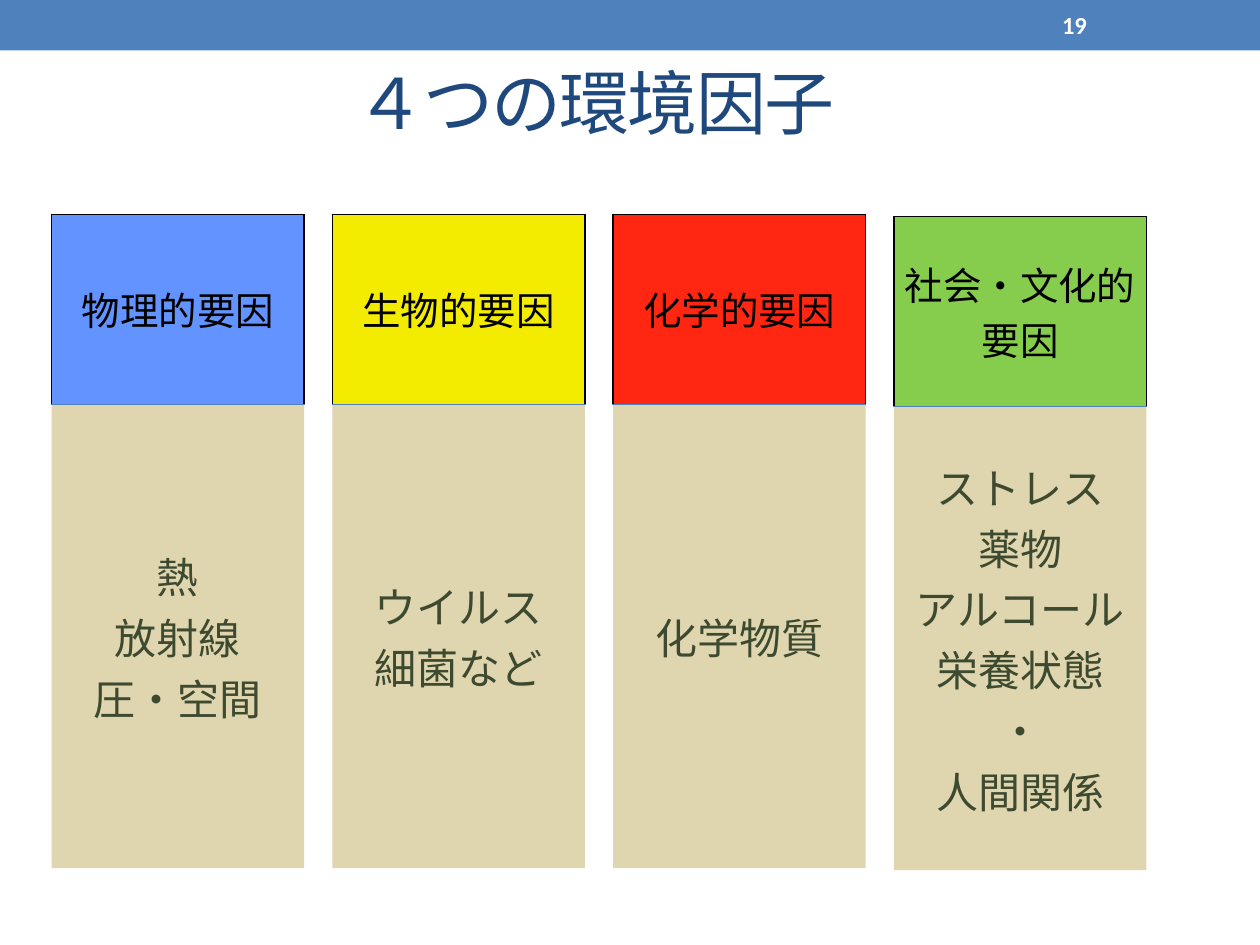
import pptx
import pptx.dml.color
import pptx.enum.shapes
import pptx.enum.text
import pptx.oxml
import pptx.oxml.ns
import pptx.util
from lxml import etree

Cm = pptx.util.Cm
Pt = pptx.util.Pt
RGBColor = pptx.dml.color.RGBColor
MIDDLE = pptx.enum.text.MSO_ANCHOR.MIDDLE
CENTER = pptx.enum.text.PP_ALIGN.CENTER
LEFT = pptx.enum.text.PP_ALIGN.LEFT

BLUE = RGBColor(0x4F, 0x81, 0xBD)
NAVY = RGBColor(0x1F, 0x49, 0x7D)
BLACK = RGBColor(0, 0, 0)
WHITE = RGBColor(0xFF, 0xFF, 0xFF)
SAND = RGBColor(0xD1, 0xC3, 0x8C)
OLIVE = RGBColor(0x3D, 0x4A, 0x30)

JAPANESE_FONT = "Noto Sans CJK JP"
TABLE_FONT = "TeX Gyre Schola"

# Content: heading, heading fill, examples
TITLE = "４つの環境因子"
PAGE_NUMBER = "19"
FACTORS = [
    ("物理的要因", RGBColor(0x62, 0x93, 0xFE), ["熱", "放射線", "圧・空間"]),
    ("生物的要因", RGBColor(0xF3, 0xEB, 0x00), ["ウイルス", "細菌など"]),
    ("化学的要因", RGBColor(0xFF, 0x27, 0x12), ["化学物質"]),
    ("社会・文化的要因", RGBColor(0x86, 0xCD, 0x4D),
     ["ストレス", "薬物", "アルコール", "栄養状態", "・", "人間関係"]),
]

# Layout in centimetres
TABLE_LEFT, TABLE_PITCH, TABLE_WIDTH = 1.04, 5.66, 5.09
TABLE_TOP, TABLE_BOTTOM_ROW = 4.32, 9.35
HEADING_HEIGHT = 3.83


def add_child(parent, tag, **attributes):
    child = etree.SubElement(parent, pptx.oxml.ns.qn(tag))
    for name, value in attributes.items():
        child.set(name, value)
    return child


def write_text(text_frame, lines, size, color, font, alignment, bold=False):
    text_frame.text = "\n".join(lines)
    for paragraph in text_frame.paragraphs:
        paragraph.alignment = alignment
        for run in paragraph.runs:
            run.font.size = Pt(size)
            run.font.color.rgb = color
            run.font.name = font
            run.font.bold = bold
            add_child(run.font._element, "a:ea", typeface=JAPANESE_FONT)


def add_text_box(slide, left, top, width, height, text, *style):
    box = slide.shapes.add_textbox(Cm(left), Cm(top), Cm(width), Cm(height))
    box.text_frame.word_wrap = True
    box.text_frame.vertical_anchor = MIDDLE
    write_text(box.text_frame, [text], *style)
    return box


def set_borders(cell, colors):
    """Draw the sides named in colors and clear the others."""
    properties = cell._tc.get_or_add_tcPr()
    for index, side in enumerate("LRTB"):
        line = pptx.oxml.parse_xml(
            f'<a:ln{side} {pptx.oxml.ns.nsdecls("a")} w="12700"/>')
        if side in colors:
            fill = add_child(line, "a:solidFill")
            add_child(fill, "a:srgbClr", val=str(colors[side]))
        else:
            add_child(line, "a:noFill")
        properties.insert(index, line)


def fill_cell(cell, lines, size, color, fill_color, borders):
    cell.margin_left = cell.margin_right = Cm(0.1)
    cell.margin_top = cell.margin_bottom = Cm(0.1)
    cell.vertical_anchor = MIDDLE
    write_text(cell.text_frame, lines, size, color, TABLE_FONT, CENTER)
    cell.fill.solid()
    cell.fill.fore_color.rgb = fill_color
    set_borders(cell, borders)


def add_factor_table(slide, left, top, heading, heading_color, examples):
    frame = slide.shapes.add_table(
        2, 1, Cm(left), Cm(top), Cm(TABLE_WIDTH),
        Cm(HEADING_HEIGHT + TABLE_BOTTOM_ROW))
    table = frame.table
    table.first_row = table.horz_banding = False
    table.rows[0].height = Cm(HEADING_HEIGHT)
    table.rows[1].height = Cm(TABLE_BOTTOM_ROW)
    heading_cell, examples_cell = table.cell(0, 0), table.cell(1, 0)
    fill_cell(heading_cell, [heading], 22, BLACK, heading_color,
              {"L": BLACK, "R": BLACK, "T": BLACK, "B": BLUE})
    fill_cell(examples_cell, examples, 24, OLIVE, SAND, {"T": BLUE})
    fill_color = examples_cell._tc.tcPr.find(
        pptx.oxml.ns.qn("a:solidFill"))[0]
    add_child(fill_color, "a:alpha", val="68000")


presentation = pptx.Presentation()
presentation.slide_width = Cm(25.4)
presentation.slide_height = Cm(19.05)
slide = presentation.slides.add_slide(presentation.slide_layouts[6])

# Top band
band = slide.shapes.add_shape(
    pptx.enum.shapes.MSO_SHAPE.RECTANGLE, 0, 0, Cm(25.4), Cm(1.02))
band.shadow.inherit = False
band.fill.solid()
band.fill.fore_color.rgb = BLUE
band.line.fill.background()

# Title, slightly tightened
title = add_text_box(slide, 5.31, 0.91, 13.36, 2.29, TITLE,
                     40, NAVY, JAPANESE_FONT, CENTER)
title.text_frame.paragraphs[0].runs[0].font._element.set("spc", "-100")

# One table per factor; the last sits slightly lower
for index, factor in enumerate(FACTORS):
    top = TABLE_TOP + (0.04 if index == len(FACTORS) - 1 else 0)
    add_factor_table(slide, TABLE_LEFT + index * TABLE_PITCH, top, *factor)

# Page number
add_text_box(slide, 21.16, 0.05, 2.97, 0.91, PAGE_NUMBER,
             14, WHITE, "Calibri", LEFT, True)

presentation.save("out.pptx")
